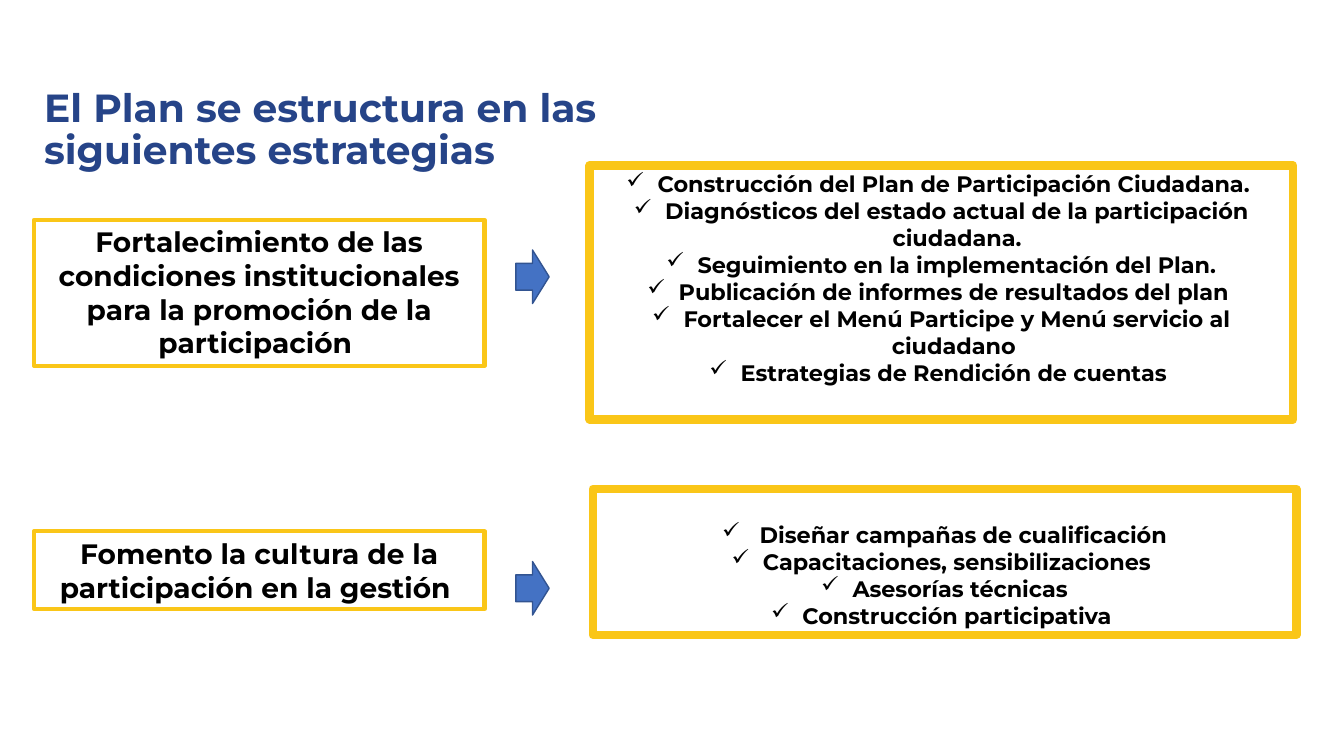
"""Build the slide that lists the strategies of the participation plan."""
from dataclasses import dataclass

from lxml.etree import SubElement
from pptx import Presentation
from pptx.dml.color import RGBColor
from pptx.enum.shapes import MSO_SHAPE
from pptx.enum.text import MSO_ANCHOR, MSO_AUTO_SIZE, PP_ALIGN
from pptx.oxml.ns import qn
from pptx.util import Cm, Pt

FONT = "Montserrat"
NAVY, GOLD, BLACK, WHITE = "264488", "FAC618", "000000", "FFFFFF"
ARROW_FILL, ARROW_LINE = "4472C4", "325491"
BULLET_INDENT = Cm(0.79)


@dataclass(frozen=True)
class Frame:
    """Position and size in centimetres."""

    left: float
    top: float
    width: float
    height: float

    def lengths(self) -> tuple:
        """Return the four lengths for a shape call."""
        return Cm(self.left), Cm(self.top), Cm(self.width), Cm(self.height)


@dataclass(frozen=True)
class Strategy:
    """A strategy, its arrow and its actions."""

    name: str
    name_frame: Frame
    arrow_top: float
    actions: tuple[str, ...]
    actions_frame: Frame
    actions_inset: float


STRATEGIES = (
    Strategy(
        "Fortalecimiento de las condiciones institucionales para la promoción de la participación ",
        Frame(0.86, 5.54, 11.35, 3.68),
        6.3,
        (
            "Construcción del Plan de Participación Ciudadana. ",
            "Diagnósticos del estado actual de la participación ciudadana.",
            "Seguimiento en la implementación del Plan.",
            "Publicación de informes de resultados del plan ",
            "Fortalecer el Menú Participe y Menú servicio al ciudadano ",
            "Estrategias de Rendición de cuentas ",
        ),
        Frame(14.86, 4.17, 17.73, 6.4),
        0.13,
    ),
    Strategy(
        "Fomento la cultura de la participación en la gestión ",
        Frame(0.86, 13.39, 11.35, 1.96),
        14.15,
        (
            " Diseñar campañas de cualificación",
            "Capacitaciones, sensibilizaciones ",
            "Asesorías técnicas",
            "Construcción participativa ",
        ),
        Frame(14.94, 12.32, 17.73, 3.68),
        0.81,
    ),
)


def color(value: str) -> RGBColor:
    """Turn a hex string into a colour."""
    return RGBColor.from_string(value)


def style_text(para, size: float, value: str) -> None:
    """Set the bold text style of a paragraph."""
    para.font.name = FONT
    para.font.size = Pt(size)
    para.font.bold = True
    para.font.color.rgb = color(value)


def add_check(para) -> None:
    """Give a paragraph a hanging check mark."""
    properties = para._p.get_or_add_pPr()
    properties.set("marL", str(BULLET_INDENT))
    properties.set("indent", str(-BULLET_INDENT))
    SubElement(properties, qn("a:buChar")).set("char", "✓")


def add_figure(page, kind, frame: Frame, fill: str | None, line: str, weight: float):
    """Draw a preset shape without a shadow."""
    figure = page.shapes.add_shape(kind, *frame.lengths())
    figure.shadow.inherit = False
    if fill:
        figure.fill.solid()
        figure.fill.fore_color.rgb = color(fill)
    else:
        figure.fill.background()
    figure.line.color.rgb = color(line)
    figure.line.width = Pt(weight)
    return figure


def add_box(page, frame: Frame, lines: tuple[str, ...], size: float, weight: float,
            fill: str | None = None, checked: bool = False, inset: float = 0.13) -> None:
    """Draw a gold frame with centred lines of text."""
    box = add_figure(page, MSO_SHAPE.RECTANGLE, frame, fill, GOLD, weight)
    text = box.text_frame
    text.word_wrap = True
    text.auto_size = MSO_AUTO_SIZE.SHAPE_TO_FIT_TEXT
    text.vertical_anchor = MSO_ANCHOR.TOP
    text.margin_top = Cm(inset)
    for index, line in enumerate(lines):
        para = text.add_paragraph() if index else text.paragraphs[0]
        para.text = line
        para.alignment = PP_ALIGN.CENTER
        if checked:
            add_check(para)
        style_text(para, size, BLACK)


def add_title(page) -> None:
    """Place and format the title."""
    title = page.shapes.title
    title.left, title.top, title.width, title.height = Frame(0.86, 1.7, 14.53, 3.18).lengths()
    title.text_frame.text = "El Plan se estructura en las siguientes estrategias"
    title.text_frame.word_wrap = True
    title.text_frame.auto_size = MSO_AUTO_SIZE.NONE
    title.text_frame.vertical_anchor = MSO_ANCHOR.MIDDLE
    para = title.text_frame.paragraphs[0]
    para.alignment = PP_ALIGN.LEFT
    para.line_spacing = 0.9
    style_text(para, 28, NAVY)


def add_strategy(page, strategy: Strategy) -> None:
    """Draw a strategy, its arrow and its actions."""
    add_box(page, strategy.name_frame, (strategy.name,), 20, 3)
    add_box(page, strategy.actions_frame, strategy.actions, 16, 6,
            fill=WHITE, checked=True, inset=strategy.actions_inset)
    add_figure(page, MSO_SHAPE.RIGHT_ARROW, Frame(13, strategy.arrow_top, 0.84, 1.35),
               ARROW_FILL, ARROW_LINE, 1)


def main() -> None:
    """Build and save the deck."""
    deck = Presentation()
    deck.slide_width, deck.slide_height = Cm(33.87), Cm(19.05)
    page = deck.slides.add_slide(deck.slide_layouts[5])
    add_title(page)
    for strategy in STRATEGIES:
        add_strategy(page, strategy)
    deck.save("out.pptx")


if __name__ == "__main__":
    main()
